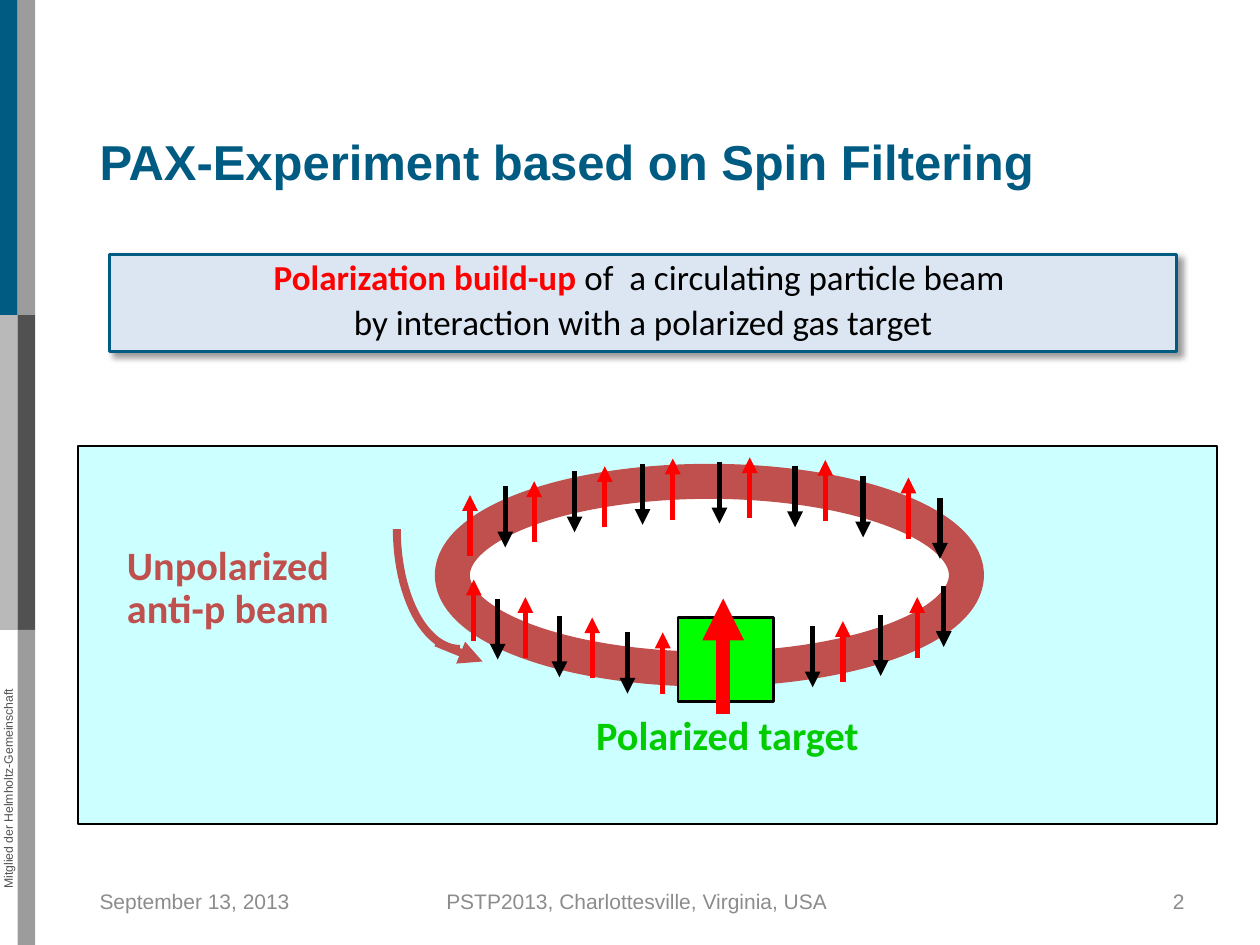
"""Build the spin filtering slide on a grid of 100 columns by 75 rows."""
import math
import typing

import lxml.etree
import pptx
import pptx.dml.color
import pptx.enum.shapes
import pptx.enum.text
import pptx.oxml.ns
import pptx.util

CELL = pptx.util.Inches(0.1)
BLUE, GRAY, DARK, MUTED = "005B82", "9C9C9C", "515151", "8C8C8C"
BLACK, RED, BEAM = "000000", "FF0000", "C0504D"
ALIGN = pptx.enum.text.PP_ALIGN
ANCHOR = pptx.enum.text.MSO_ANCHOR
SHAPE = pptx.enum.shapes.MSO_SHAPE
SPIN_LENGTH = 4.85
STRIPE_WIDTH, STRIPE_HEIGHT = 1.4, 25


class Box(typing.NamedTuple):
    column: float
    row: float
    columns: float
    rows: float


class Spin(typing.NamedTuple):
    column: float
    top: float


class Stripe(typing.NamedTuple):
    column: int
    row: int
    color: str


class Run(typing.NamedTuple):
    text: str
    color: str
    bold: bool = False


SPINS_DOWN = [
    Spin(45.6, 37.4), Spin(40.1, 38.6), Spin(39.5, 47.5), Spin(44.4, 48.9), Spin(51, 36.8),
    Spin(63.1, 37), Spin(57.1, 36.7), Spin(74.9, 46.5), Spin(74.6, 39.5), Spin(68.5, 37.8),
    Spin(49.8, 50.2), Spin(64.5, 49.7), Spin(69.9, 48.8),
]
SPINS_UP = [
    Spin(48, 37), Spin(42.4, 38.2), Spin(41.7, 47.4), Spin(47, 49), Spin(53.4, 36.4),
    Spin(65.5, 36.5), Spin(59.5, 36.3), Spin(37.6, 46), Spin(37.3, 39.3), Spin(72.1, 37.9),
    Spin(52.6, 50.2), Spin(66.9, 49.3), Spin(72.8, 47.4),
]
STRIPES = [
    Stripe(0, 1, "B9B9B9"), Stripe(1, 1, DARK), Stripe(0, 0, BLUE),
    Stripe(1, 0, GRAY), Stripe(1, 2, GRAY),
]


def grid(cells: float) -> int:
    """Turn grid cells into a length."""
    return round(cells * CELL)


def rgb(color: str) -> pptx.dml.color.RGBColor:
    """Turn a hex string into a colour."""
    return pptx.dml.color.RGBColor.from_string(color)


def place(box: Box) -> list[int]:
    """Give the left, top, width and height of a box."""
    return [grid(cells) for cells in box]


def add_element(parent, tag: str, **attributes: str):
    """Append a drawing element."""
    return lxml.etree.SubElement(parent, pptx.oxml.ns.qn(tag), attributes)


def write(shape, lines, *, size, font="Calibri", align=ALIGN.LEFT, anchor=ANCHOR.TOP,
          margins=(0.1, 0.05, 0.1, 0.05), spacing=None, gap=0) -> None:
    """Fill a shape with formatted lines of runs."""
    frame = shape.text_frame
    frame.word_wrap = True
    frame.auto_size = pptx.enum.text.MSO_AUTO_SIZE.NONE
    frame.vertical_anchor = anchor
    (frame.margin_left, frame.margin_top,
     frame.margin_right, frame.margin_bottom) = map(pptx.util.Inches, margins)
    for index, runs in enumerate(lines):
        paragraph = frame.add_paragraph() if index else frame.paragraphs[0]
        paragraph.alignment = align
        paragraph.line_spacing = spacing
        if index:
            paragraph.space_before = pptx.util.Pt(gap)
        for item in runs:
            run = paragraph.add_run()
            run.text = item.text
            run.font.size = pptx.util.Pt(size)
            run.font.name = font
            run.font.bold = item.bold
            run.font.color.rgb = rgb(item.color)


def add_text(slide, box: Box, run: Run, **text_format):
    """Add a text box holding one run."""
    shape = slide.shapes.add_textbox(*place(box))
    write(shape, [[run]], **text_format)
    return shape


def paint(shape, fill: str | None, line: str | None, width: float) -> None:
    """Set the fill and outline and drop the shadow."""
    shape.shadow.inherit = False
    if fill:
        shape.fill.solid()
        shape.fill.fore_color.rgb = rgb(fill)
    else:
        shape.fill.background()
    if line:
        shape.line.color.rgb = rgb(line)
        shape.line.width = pptx.util.Pt(width)
    else:
        shape.line.fill.background()


def add_figure(slide, kind, box: Box, fill: str, line: str | None = None, width: float = 1.5):
    """Add a painted preset shape."""
    shape = slide.shapes.add_shape(kind, *place(box))
    paint(shape, fill, line, width)
    return shape


def add_arrow(slide, start: tuple, end: tuple, color: str, width: float) -> None:
    """Add a straight arrow between two grid points."""
    arrow = slide.shapes.add_connector(
        pptx.enum.shapes.MSO_CONNECTOR.STRAIGHT, *map(grid, (*start, *end)))
    arrow.line.color.rgb = rgb(color)
    arrow.line.width = pptx.util.Pt(width)
    add_element(arrow.line._get_or_add_ln(), "a:tailEnd", type="triangle")
    add_element(arrow._element.spPr, "a:effectLst")


def add_shadow(shape) -> None:
    """Give a shape a soft shadow to the lower right."""
    effects = shape._element.spPr.find(pptx.oxml.ns.qn("a:effectLst"))
    shadow = add_element(effects, "a:outerShdw", blurRad=str(pptx.util.Pt(4)),
                         dist=str(pptx.util.Pt(3)), dir="2700000",
                         algn="tl", rotWithShape="0")
    color = add_element(shadow, "a:srgbClr", val=BLACK)
    add_element(color, "a:alpha", val="40000")


def add_beam_curve(slide) -> None:
    """Draw the quarter ellipse that leads into the ring."""
    angles = [math.pi * (1 - step / 48) for step in range(25)]
    points = [(grid(36.5 + 5 * math.cos(angle)), grid(42 + 9.5 * math.sin(angle)))
              for angle in angles]
    builder = slide.shapes.build_freeform(*points[0])
    builder.add_line_segments(points[1:], close=False)
    paint(builder.convert_to_shape(), None, BEAM, 4.5)


def add_frame(slide) -> None:
    """Add the side stripes, title and footer."""
    for stripe in STRIPES:
        box = Box(stripe.column * STRIPE_WIDTH, stripe.row * STRIPE_HEIGHT,
                  STRIPE_WIDTH, STRIPE_HEIGHT)
        add_figure(slide, SHAPE.RECTANGLE, box, stripe.color)
    member = add_text(slide, Box(-11.8, 62, 24.9, 1.2),
                      Run("Mitglied der Helmholtz-Gemeinschaft", DARK), size=7,
                      font="Arial", align=ALIGN.CENTER, margins=(0, 0, 0, 0))
    member.rotation = 270
    title = slide.shapes.title
    title.left, title.top, title.width, title.height = place(Box(7.9, 9.8, 91, 6.3))
    write(title, [[Run("PAX-Experiment based on Spin Filtering", BLUE, True)]],
          size=28, font="Arial", margins=(0, 0.06, 0, 0))
    for text, column, columns, align, left in (
            ("September 13, 2013", 7.9, 23.3, ALIGN.LEFT, 0),
            ("PSTP2013, Charlottesville, Virginia, USA", 34.2, 32.7, ALIGN.CENTER, 0.1),
            ("2", 71.7, 23.3, ALIGN.RIGHT, 0.1)):
        add_text(slide, Box(column, 69.5, columns, 4), Run(text, MUTED), size=12,
                 font="Arial", align=align, anchor=ANCHOR.MIDDLE,
                 margins=(left, 0.05, 0.1, 0.05))


def add_diagram(slide) -> None:
    """Add the ring, its spins and the target."""
    add_figure(slide, SHAPE.RECTANGLE, Box(6.2, 35.4, 90.4, 30), "CCFFFF", BLACK)
    add_figure(slide, SHAPE.OVAL, Box(35.9, 38.2, 40.8, 14.9), "FFFFFF", BEAM, 20)
    add_text(slide, Box(9.1, 42.8, 22.6, 8.6), Run("Unpolarized anti-p beam", BEAM, True),
             size=23, spacing=0.9)
    add_beam_curve(slide)
    add_arrow(slide, (34.6, 51), (38.3, 52.5), BEAM, 4.5)
    add_text(slide, Box(44.1, 56.3, 27.3, 4.5), Run("Polarized target", "00CC00", True),
             size=23, spacing=0.9, align=ALIGN.CENTER)
    for column, top in SPINS_DOWN:
        add_arrow(slide, (column, top), (column, top + SPIN_LENGTH), BLACK, 3)
    for column, top in SPINS_UP:
        add_arrow(slide, (column, top + SPIN_LENGTH), (column, top), RED, 3)
    add_figure(slide, SHAPE.RECTANGLE, Box(53.8, 49, 7.6, 6.7), "00FF00", BLACK)
    add_arrow(slide, (57.4, 56.7), (57.4, 47.5), RED, 8)


def main() -> None:
    """Build and save the slide."""
    presentation = pptx.Presentation()
    presentation.slide_width, presentation.slide_height = grid(100), grid(75)
    slide = presentation.slides.add_slide(presentation.slide_layouts[5])
    add_frame(slide)
    summary = add_figure(slide, SHAPE.RECTANGLE, Box(8.7, 20.2, 84.7, 7.7), "DCE6F2", BLUE)
    add_shadow(summary)
    write(summary, [[Run("Polarization build-up ", RED, True),
                     Run("of  a circulating particle beam ", BLACK)],
                    [Run("by interaction with a polarized gas target", BLACK)]],
          size=20, align=ALIGN.CENTER, spacing=0.9, gap=4)
    add_diagram(slide)
    presentation.save("out.pptx")


if __name__ == "__main__":
    main()
